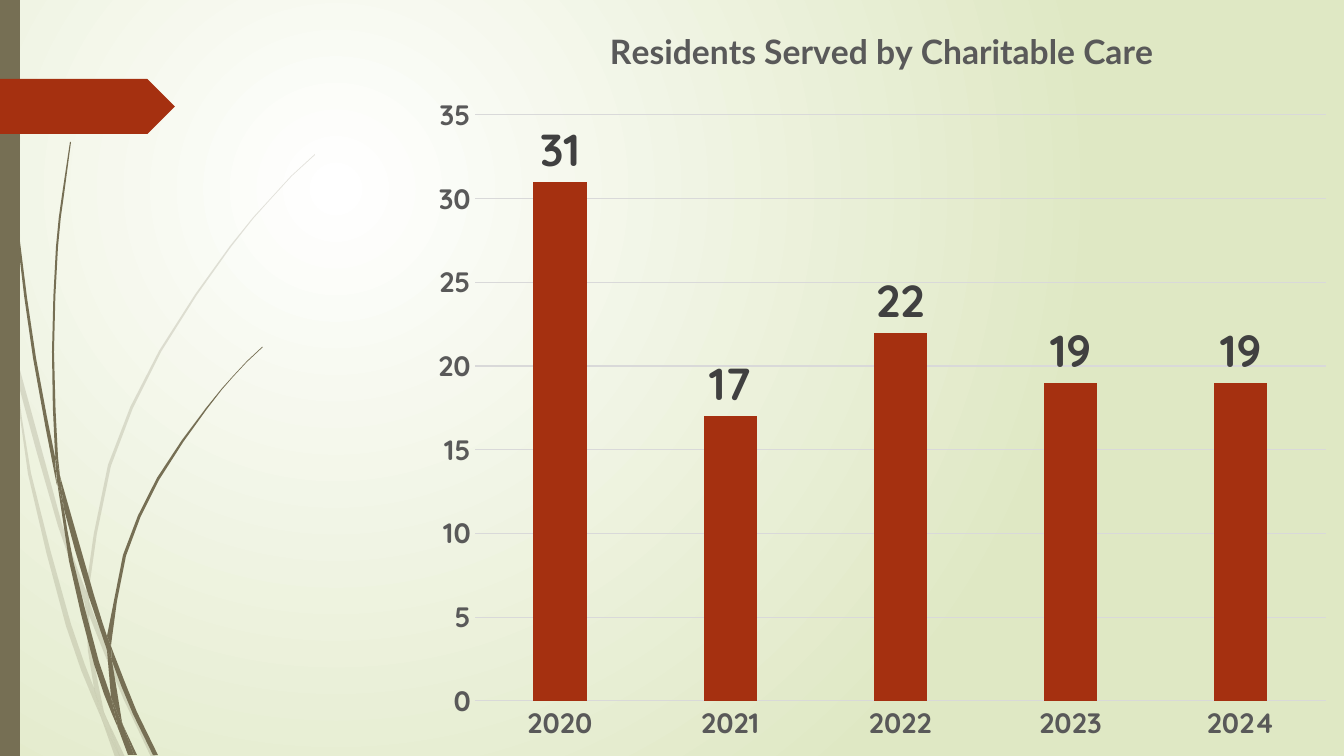
from math import dist

from lxml import etree
from pptx import Presentation
from pptx.chart.data import CategoryChartData
from pptx.dml.color import RGBColor
from pptx.enum import chart as chart_enum, shapes
from pptx.oxml import parse_xml
from pptx.oxml.ns import nsdecls, qn
from pptx.util import Pt

WIDTH, HEIGHT = 1344, 756
PX = 12192000 / WIDTH
OLIVE, RUST, GRID, GREY = "766F54", "A53010", "D9D9D9", "595959"


def paint(fill, color):
    fill.solid()
    fill.fore_color.rgb = RGBColor.from_string(color)


def set_font(font, name, size, color):
    font.name, font.size, font.bold = name, Pt(size), True
    font.color.rgb = RGBColor.from_string(color)


presentation = Presentation()
presentation.slide_width = round(WIDTH * PX)
presentation.slide_height = round(HEIGHT * PX)
slide = presentation.slides.add_slide(presentation.slide_layouts[6])

# Radial background, brightest at the upper left
background = slide.background.fill
background.gradient()
for stop, color in zip(background.gradient_stops, ("FFFFFF", "DFE8C4")):
    stop.color.rgb = RGBColor.from_string(color)
gradient = slide._element.find(".//" + qn("a:gradFill"))
gradient.replace(gradient.find(qn("a:lin")), parse_xml(
    f'<a:path {nsdecls("a")} path="circle">'
    '<a:fillToRect l="50000" t="50000" r="100000" b="100000"/></a:path>'))

# Blades of grass, each cut where blades meet
faint_blades = [
    [(11, 353), (9, 325), (0, 284), (0, 301), (10, 347)],
    [(58, 526), (85, 604), (86, 591), (62, 524), (14, 348), (17, 379)],
    [(93, 612), (89, 601), (89, 615), (124, 700), (151, 757), (156, 757),
     (128, 698)],
    [(120, 757), (125, 757), (106, 717)],
    [(94, 688), (71, 624), (31, 473), (17, 379), (11, 353), (28, 474),
     (66, 626), (93, 699), (102, 720), (100, 713)],
    [(85, 604), (88, 651), (94, 688), (97, 698), (106, 717), (104, 712),
     (92, 651), (89, 615), (89, 613)],
    [(89, 589), (111, 466), (161, 352), (231, 247), (270, 200), (292, 176),
     (315, 155), (315, 154), (291, 176), (270, 199), (230, 246), (159, 351),
     (108, 465), (86, 589), (86, 591), (89, 601)],
    [(102, 720), (115, 757), (120, 757)],
    [(89, 613), (89, 615), (89, 601), (86, 591), (85, 604)],
    [(97, 698), (94, 688), (100, 713), (102, 720), (120, 757), (106, 717)],
]
dark_blades = [
    [(7, 111), (17, 235), (33, 358), (56, 481), (57, 485), (55, 461), (55, 457),
     (36, 358), (19, 234), (8, 110), (5, 48), (4, 0), (3, 0), (4, 48)],
    [(89, 597), (107, 650), (107, 638), (107, 636), (94, 595), (60, 476),
     (64, 509)],
    [(114, 654), (111, 646), (112, 661), (133, 714), (153, 755), (158, 755),
     (137, 712)],
    [(111, 697), (99, 662), (73, 560), (64, 509), (57, 481), (69, 561),
     (94, 664), (112, 714), (118, 728), (117, 723)],
    [(60, 476), (58, 457), (54, 352), (58, 247), (64, 195), (71, 142),
     (70, 142), (62, 195), (56, 247), (52, 352), (55, 453)],
    [(134, 755), (137, 755), (123, 725)],
    [(57, 481), (64, 509), (60, 476), (55, 453), (55, 457)],
    [(112, 638), (126, 556), (159, 480), (207, 409), (233, 377), (247, 362),
     (263, 347), (262, 347), (247, 361), (233, 376), (206, 408), (157, 478),
     (123, 555), (107, 636), (111, 646)],
    [(118, 728), (128, 755), (132, 755)],
    [(107, 650), (111, 697), (117, 712), (123, 725), (122, 722), (112, 661),
     (110, 656)],
    [(107, 650), (110, 656), (112, 661), (111, 646), (107, 636)],
    [(117, 712), (111, 697), (117, 723), (118, 728), (131, 755), (134, 755),
     (123, 725)],
]
LONG_EDGE, GENTLE_TURN, FINE = 40, 0.9, 10
for opacity, blades in ((20, faint_blades), (100, dark_blades)):
    group = slide.shapes.add_group_shape()
    for nodes in blades:
        outline = []
        for i, q in enumerate(nodes):
            p, r, s = (nodes[(i + k) % len(nodes)] for k in (-1, 1, 2))
            outline.append(q)
            # Bow a long edge outwards if it runs on smoothly at both ends
            turns = [((b[0] - a[0]) * (c[0] - b[0]) + (b[1] - a[1]) * (c[1] - b[1]))
                     / (dist(a, b) * dist(b, c)) for a, b, c in ((p, q, r), (q, r, s))]
            if dist(q, r) > LONG_EDGE and min(turns) > GENTLE_TURN:
                outline.append([(9 * (b + c) - a - d) / 16
                                for a, b, c, d in zip(p, q, r, s)])
        points = [(x * FINE, y * FINE) for x, y in outline]
        builder = group.shapes.build_freeform(*points[0], scale=PX / FINE)
        builder.add_line_segments(points[1:])
        blade = builder.convert_to_shape()
        blade.shadow.inherit = False
        blade.line.fill.background()
        paint(blade.fill, OLIVE)
        if opacity < 100:
            color = blade._element.spPr.find(".//" + qn("a:srgbClr"))
            etree.SubElement(color, qn("a:alpha"), val=str(opacity * 1000))

# Side band and arrow tag
for preset, top, width, height, color in (
        (shapes.MSO_SHAPE.RECTANGLE, 0, 20, HEIGHT, OLIVE),
        (shapes.MSO_SHAPE.PENTAGON, 79, 175, 55, RUST)):
    shape = slide.shapes.add_shape(
        preset, 0, round(top * PX), round(width * PX), round(height * PX))
    shape.shadow.inherit = False
    shape.line.fill.background()
    paint(shape.fill, color)

# Column chart
CHART_LEFT = 420
CHART_WIDTH = WIDTH - CHART_LEFT
data = CategoryChartData()
data.categories = ["2020", "2021", "2022", "2023", "2024"]
data.add_series("Series 1", (31, 17, 22, 19, 19))
chart = slide.shapes.add_chart(
    chart_enum.XL_CHART_TYPE.COLUMN_CLUSTERED, round(CHART_LEFT * PX), 0,
    round(CHART_WIDTH * PX), round(HEIGHT * PX), data).chart
chart.has_legend = False
set_font(chart.font, "Quicksand", 20, "000000")

chart.has_title = True
chart.chart_title.include_in_layout = False
title = chart.chart_title.text_frame.paragraphs[0]
title.text = "Residents Served by Charitable Care"
set_font(title.font, "Lato", 24, GREY)

for axis in (chart.category_axis, chart.value_axis):
    axis.major_tick_mark = chart_enum.XL_TICK_MARK.NONE
    axis.minor_tick_mark = chart_enum.XL_TICK_MARK.NONE
    set_font(axis.tick_labels.font, "Quicksand", 20, GREY)
values = chart.value_axis
values.minimum_scale, values.maximum_scale, values.major_unit = 0, 35, 5
values.format.line.fill.background()
for line in (chart.category_axis.format.line, values.major_gridlines.format.line):
    line.width = Pt(0.75)
    paint(line.fill, GRID)

plot = chart.plots[0]
plot.gap_width, plot.overlap, plot.vary_by_categories = 219, -27, False
paint(plot.series[0].format.fill, RUST)
labels = plot.series[0].data_labels
labels.show_value = True
labels.position = chart_enum.XL_LABEL_POSITION.OUTSIDE_END
set_font(labels.font, "Quicksand", 32, "404040")

# Fixed places for the title and the inner plot area, in px of the chart
for parent, before, target, places in (
        (chart.chart_title._element, "c:overlay", "",
         {"x": 184 / CHART_WIDTH, "y": 21 / HEIGHT}),
        (chart._chartSpace.chart.plotArea, "c:barChart",
         '<c:layoutTarget val="inner"/>',
         {"x": 55 / CHART_WIDTH, "y": 115 / HEIGHT,
          "w": 851 / CHART_WIDTH, "h": 586 / HEIGHT})):
    for layout in parent.findall(qn("c:layout")):
        parent.remove(layout)
    modes = "".join(f'<c:{key}Mode val="edge"/>' for key in "xy")
    sizes = "".join(f'<c:{key} val="{value:.4f}"/>' for key, value in places.items())
    parent.find(qn(before)).addprevious(parse_xml(
        f'<c:layout {nsdecls("c")}><c:manualLayout>{target}{modes}{sizes}'
        '</c:manualLayout></c:layout>'))

presentation.save("out.pptx")
